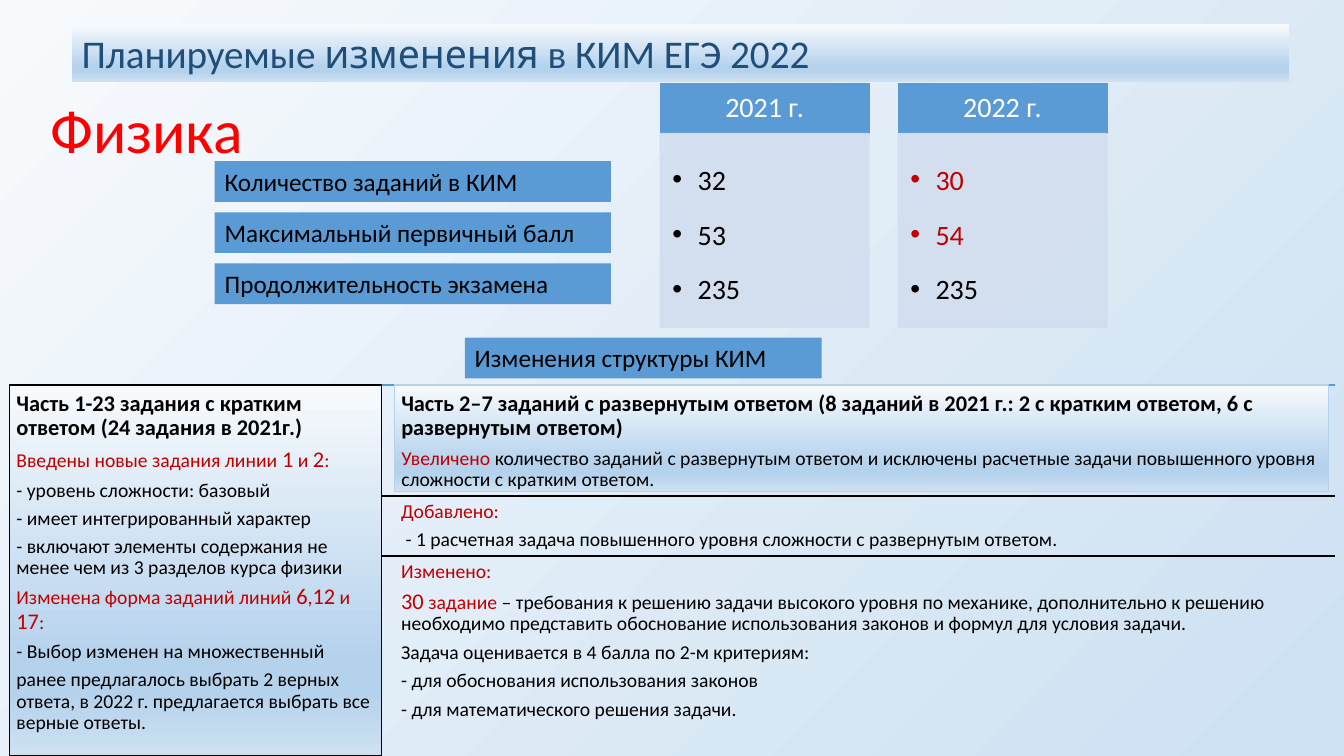
from lxml.etree import SubElement
from pptx import Presentation
from pptx.dml.color import RGBColor
from pptx.enum.shapes import MSO_CONNECTOR, MSO_SHAPE
from pptx.enum.text import MSO_ANCHOR, MSO_AUTO_SIZE, PP_ALIGN
from pptx.oxml.ns import qn
from pptx.util import Inches, Pt

BLACK, WHITE, RED, DARK_RED = "000000", "FFFFFF", "FF0000", "C00000"
NAVY, BLUE, PALE, SKY = "1F4E79", "5B9BD5", "D2DEEF", "B5D2EC"
PAGE_STOPS = [(0, "F7FAFD"), (97, "CEE1F2")]
PANEL_STOPS = [(0, "F7FAFD"), (74, SKY), (83, SKY), (100, "CEE1F2")]


def rgb(value):
    """Turn a hex string into a colour."""
    return RGBColor.from_string(value)


def run(text, size=14, color=BLACK, bold=False, font="Calibri"):
    """Describe a piece of text and its format."""
    return dict(text=text, size=size, color=color, bold=bold, font=font)


def red(text, size=14):
    """Describe a piece of highlighted text."""
    return run(text, size, DARK_RED)


class Deck:
    """Holds the style and the current slide; lengths are percents of its size."""

    def __init__(self):
        """Open a title-only slide with a gradient background."""
        self.prs = Presentation()
        self.prs.slide_width, self.prs.slide_height = Inches(13.333), Inches(7.5)
        self.s = self.prs.slides.add_slide(self.prs.slide_layouts[5])
        self.gradient(self.s.background.fill, self.s.element, PAGE_STOPS, 315)

    def place(self, x, y, w=0, h=0):
        """Convert percents of the slide into lengths."""
        sw, sh = self.prs.slide_width, self.prs.slide_height
        return [int(v * full / 100) for v, full in zip((x, y, w, h), (sw, sh, sw, sh))]

    def gradient(self, fill, element, stops, angle):
        """Fill with a linear gradient of the given stops."""
        fill.gradient()
        fill.gradient_angle = angle
        gs_list = next(element.iter(qn("a:gsLst")))
        for gs in list(gs_list):
            gs_list.remove(gs)
        for pos, color in stops:
            gs = SubElement(gs_list, qn("a:gs"), pos=str(pos * 1000))
            SubElement(gs, qn("a:srgbClr"), val=color)

    def set_text(self, shape, paras, anchor=MSO_ANCHOR.TOP, align=PP_ALIGN.LEFT, inset=None,
                 grow=False, spacing=0.9, after=0.0, bullet=False):
        """Put paragraphs, each a list of runs, into a shape."""
        tf = shape.text_frame
        tf.word_wrap = True
        tf.auto_size = MSO_AUTO_SIZE.SHAPE_TO_FIT_TEXT if grow else MSO_AUTO_SIZE.NONE
        tf.vertical_anchor = anchor
        if inset:
            tf.margin_left, tf.margin_top, tf.margin_right, tf.margin_bottom = map(Inches, inset)
        for i, runs in enumerate(paras):
            p = tf.add_paragraph() if i else tf.paragraphs[0]
            p.alignment, p.line_spacing = align, spacing
            p.space_before = Pt(0)
            p.space_after = Pt(after * max(item["size"] for item in runs))
            if bullet:
                p.level = 1
                pPr = p._p.get_or_add_pPr()
                pPr.set("marL", str(Inches(0.25)))
                pPr.set("indent", str(-Inches(0.25)))
                SubElement(pPr, qn("a:buFont"), typeface="Arial")
                SubElement(pPr, qn("a:buChar"), char="•")
            for item in runs:
                r = p.add_run()
                r.text = item["text"]
                r.font.size, r.font.name = Pt(item["size"]), item["font"]
                r.font.bold = item["bold"]
                r.font.color.rgb = rgb(item["color"])

    def title(self, at, runs):
        """Move and fill the title placeholder."""
        sp = self.s.shapes.title
        sp.left, sp.top, sp.width, sp.height = self.place(*at)
        self.set_text(sp, [runs], anchor=MSO_ANCHOR.MIDDLE)

    def box(self, at, paras, fill=None, line=None, width=1, alpha=None, **fmt):
        """Add a rectangle with text; no fill means the panel gradient."""
        sp = self.s.shapes.add_shape(MSO_SHAPE.RECTANGLE, *self.place(*at))
        sp.shadow.inherit = False
        if fill:
            sp.fill.solid()
            sp.fill.fore_color.rgb = rgb(fill)
        else:
            self.gradient(sp.fill, sp.element, PANEL_STOPS, 270)
        if line:
            sp.line.color.rgb = rgb(line)
            sp.line.width = Pt(width)
        else:
            sp.line.fill.background()
        if alpha:
            for clr in sp.element.spPr.iter(qn("a:srgbClr")):
                SubElement(clr, qn("a:alpha"), val=str(alpha * 1000))
        self.set_text(sp, paras, **fmt)

    def text(self, at, paras, **fmt):
        """Add a text box."""
        self.set_text(self.s.shapes.add_textbox(*self.place(*at)), paras, **fmt)

    def rule(self, x1, x2, y, color=BLACK):
        """Add a horizontal line."""
        left, top = self.place(x1, y)[:2]
        right = self.place(x2, y)[0]
        line = self.s.shapes.add_connector(MSO_CONNECTOR.STRAIGHT, left, top, right, top)
        line.line.color.rgb = rgb(color)
        line.line.width = Pt(1)
        SubElement(line.element.spPr, qn("a:effectLst"))

    def label(self, x, y, w, text):
        """Add a blue label."""
        self.box((x, y, w, 5.39), [[run(text, 18)]], BLUE, grow=True, spacing=1.0)

    def year_card(self, x, year, values):
        """Add a year heading above a bulleted list of values."""
        self.box((x, 11.07, 15.53, 6.6), [[run(year, 20, WHITE)]], BLUE, BLUE,
                 anchor=MSO_ANCHOR.MIDDLE, align=PP_ALIGN.CENTER,
                 inset=(0.16, 0.09, 0.16, 0.09), after=0.35)
        self.box((x, 17.67, 15.53, 25.6), [[run(v, 20, color)] for v, color in values],
                 PALE, PALE, alpha=90, inset=(0.12, 0.12, 0.16, 0.17),
                 spacing=1.5, after=0.15, bullet=True)


def main():
    """Build the slide."""
    deck = Deck()
    deck.title((3, 12.4, 41.7, 10.53), [run("Физика", 44, RED)])
    deck.box((5.33, 3.2, 90.6, 7.6), [[
        run("Планируемые ", 28, NAVY), run("изменения", 28, NAVY, font="Cabin"),
        run(" в КИМ ЕГЭ 2022", 28, NAVY)]], grow=True, spacing=1.0)

    metrics = ["Количество заданий в КИМ", "Максимальный первичный балл",
               "Продолжительность экзамена"]
    for i, metric in enumerate(metrics):
        deck.label(15.98, 21.33 + i * 6.75, 29.48, metric)
    cards = [("2021 г.", [("32", BLACK), ("53", BLACK), ("235", BLACK)]),
             ("2022 г.", [("30", DARK_RED), ("54", DARK_RED), ("235", BLACK)])]
    for i, (year, values) in enumerate(cards):
        deck.year_card(49.13 + i * 17.7, year, values)
    deck.label(34.58, 44.67, 26.55, "Изменения структуры КИМ")

    panel = dict(inset=[0.07] * 4, after=0.35)
    note = dict(inset=[0.06] * 4, after=0.35)
    deck.rule(0.7, 99.3, 50.93, BLUE)
    deck.box((0.7, 50.93, 27.68, 49.07), [
        [run("Часть 1-23 задания с кратким ответом (24 задания в 2021г.)", 16, bold=True)],
        [red("Введены новые задания линии "), red("1", 16), red(" и "), red("2", 16), red(":")],
        [run("- уровень сложности: базовый")],
        [run("- имеет интегрированный характер")],
        [run("- включают элементы содержания не менее чем из 3 разделов курса физики")],
        [red("Изменена форма заданий линий "), red("6", 16), red(","), red("12", 16),
         red(" и "), red("17", 16), red(":")],
        [run("- Выбор изменен на множественный")],
        [run("ранее предлагалось выбрать 2 верных ответа, в 2022 г. "
             "предлагается выбрать все верные ответы.")],
    ], line=BLACK, **panel)
    deck.box((29.33, 50.93, 69.53, 14.13), [
        [run("Часть 2–7 заданий с развернутым ответом (8 заданий в 2021 г.: "
             "2 с кратким ответом, 6 с развернутым ответом)", 16, bold=True)],
        [red("Увеличено"), run(" количество заданий с развернутым ответом и исключены расчетные "
                               "задачи повышенного уровня сложности с кратким ответом.")],
    ], line=SKY, width=0.75, **panel)
    deck.rule(28.4, 99.3, 65.6)
    deck.text((29.4, 65.6, 69.53, 7.07), [
        [red("Добавлено:")],
        [run(" - 1 расчетная задача повышенного уровня сложности с развернутым ответом.")],
    ], **note)
    deck.rule(28.4, 99.3, 73.55)
    deck.text((29.4, 73.5, 69.53, 23.07), [
        [red("Изменено:")],
        [red("30", 16), red(" задание "),
         run("– требования к решению задачи высокого уровня по механике, дополнительно к решению "
             "необходимо представить обоснование использования законов и формул "
             "для условия задачи.")],
        [run("Задача оценивается в 4 балла по 2-м критериям:")],
        [run("- для обоснования использования законов")],
        [run("- для математического решения задачи.")],
    ], **note)
    deck.prs.save("out.pptx")


if __name__ == "__main__":
    main()
